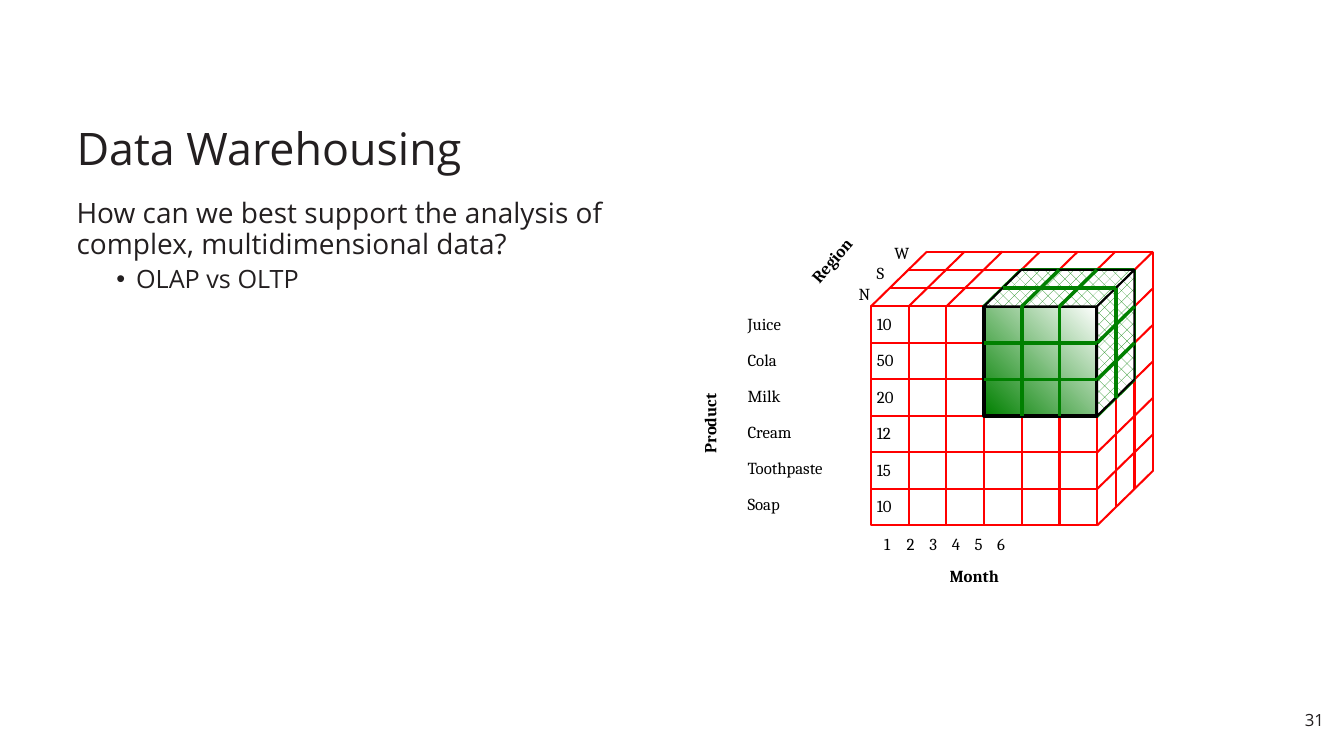
from lxml import etree
from pptx import Presentation
from pptx import util as u
from pptx.dml.color import RGBColor
from pptx.enum import dml, shapes, text
from pptx.oxml.ns import qn

COLOURS = {
    "ink": "231F20",
    "label": "000000",
    "grid": "FF0000",
    "slice": "008000",
    "edge": "000000",
    "paper": "FFFFFF",
}
THIN, THICK = 1.48, 2.48
COUNT, DEPTH = 6, 3
CUBE_LEFT, CUBE_TOP = 21.95, 7.72
CELL_WIDTH, CELL_HEIGHT = 0.95, 0.92
DEPTH_X, DEPTH_Y = 0.47, 0.46
SLICE_START, SLICE_ROWS, SLICE_DEPTH = 3, 3, 2
MONTH_STEP = 0.57

PRODUCTS = ["Juice", "Cola", "Milk", "Cream", "Toothpaste", "Soap"]
SALES = ["10", "50", "20", "12", "15", "10"]
REGIONS = ["N", "S", "W"]


def colour(name):
    return RGBColor.from_string(COLOURS[name])


def project(column, row, depth):
    return (
        u.Cm(CUBE_LEFT + column * CELL_WIDTH + depth * DEPTH_X),
        u.Cm(CUBE_TOP + row * CELL_HEIGHT - depth * DEPTH_Y),
    )


def write_text(paragraph, content, size=12, font="Cambria", color="label",
               bold=False, align=text.PP_ALIGN.LEFT, spacing=None, before=0):
    paragraph.alignment = align
    paragraph.space_before = u.Pt(before)
    if spacing:
        paragraph.line_spacing = spacing
    run = paragraph.add_run()
    run.text = content
    run.font.size = u.Pt(size)
    run.font.name = font
    run.font.bold = bold
    run.font.color.rgb = colour(color)


def place(shape, left, top, width, height):
    shape.left, shape.top = u.Cm(left), u.Cm(top)
    shape.width, shape.height = u.Cm(width), u.Cm(height)


def set_frame(frame, anchor, side=0.0, edge=0.0):
    frame.word_wrap = True
    frame.auto_size = text.MSO_AUTO_SIZE.NONE
    frame.vertical_anchor = anchor
    frame.margin_left = frame.margin_right = u.Cm(side)
    frame.margin_top = frame.margin_bottom = u.Cm(edge)


def set_bullet(paragraph, margin=0.0, indent=0.0, character=None):
    properties = paragraph._p.get_or_add_pPr()
    properties.set("marL", str(u.Cm(margin)))
    properties.set("indent", str(u.Cm(indent)))
    if character:
        etree.SubElement(properties, qn("a:buFont"), typeface="Arial")
        etree.SubElement(properties, qn("a:buChar"), char=character)
    else:
        etree.SubElement(properties, qn("a:buNone"))


def add_label(slide, content, left, top, width=2.5, height=0.6, rotation=0,
              **text_format):
    box = slide.shapes.add_textbox(0, 0, 0, 0)
    place(box, left, top, width, height)
    box.rotation = rotation
    set_frame(box.text_frame, text.MSO_ANCHOR.TOP)
    paragraph = box.text_frame.paragraphs[0]
    write_text(paragraph, content, **text_format)
    return paragraph


def add_line(slide, start, end, color="grid", width=THIN):
    line = slide.shapes.add_connector(
        shapes.MSO_CONNECTOR.STRAIGHT, *project(*start), *project(*end))
    line.line.color.rgb = colour(color)
    line.line.width = u.Pt(width)
    etree.SubElement(line._element.spPr, qn("a:effectLst"))


def add_front(slide, start, end, color, width):
    left, top = project(*start)
    right, bottom = project(*end)
    front = slide.shapes.add_shape(
        shapes.MSO_SHAPE.RECTANGLE, left, top, right - left, bottom - top)
    front.shadow.inherit = False
    front.fill.background()
    front.line.color.rgb = colour(color)
    front.line.width = u.Pt(width)
    return front


def add_face(slide, corners):
    points = [project(*corner) for corner in corners]
    builder = slide.shapes.build_freeform(*points[0])
    builder.add_line_segments(points[1:], close=True)
    face = builder.convert_to_shape()
    face.shadow.inherit = False
    face.fill.patterned()
    face.fill.pattern = dml.MSO_PATTERN_TYPE.PERCENT_25
    face.fill.fore_color.rgb = colour("slice")
    face.fill.back_color.rgb = colour("paper")
    face.line.color.rgb = colour("edge")
    face.line.width = u.Pt(THIN)


def add_cube(slide):
    add_front(slide, (0, 0, 0), (COUNT, COUNT, 0), "grid", THIN)
    for step in range(1, COUNT):
        add_line(slide, (0, step, 0), (COUNT, step, 0))
        add_line(slide, (step, 0, 0), (step, COUNT, 0))
    for depth in range(1, DEPTH + 1):
        add_line(slide, (0, 0, depth), (COUNT, 0, depth))
        add_line(slide, (COUNT, 0, depth), (COUNT, COUNT, depth))
    for step in range(COUNT + 1):
        add_line(slide, (step, 0, 0), (step, 0, DEPTH))
    for step in range(1, COUNT + 1):
        add_line(slide, (COUNT, step, 0), (COUNT, step, DEPTH))


def add_slice(slide):
    first, last, rows, back = SLICE_START, COUNT, SLICE_ROWS, SLICE_DEPTH
    front = add_front(slide, (first, 0, 0), (last, rows, 0), "edge", THICK)
    front.fill.gradient()
    front.fill.gradient_angle = 45
    for stop, name in zip(front.fill.gradient_stops, ("slice", "paper")):
        stop.color.rgb = colour(name)

    top = [(first, 0, 0), (first, 0, back), (last, 0, back), (last, 0, 0)]
    side = [(last, 0, 0), (last, 0, back), (last, rows, back), (last, rows, 0)]
    outline = top[:3] + side[2:]
    for start, end in zip(outline, outline[1:]):
        add_line(slide, start, end, "slice", THICK)
    add_face(slide, top)
    add_face(slide, side)

    for row in range(1, rows):
        add_line(slide, (first, row, 0), (last, row, 0), "slice", THICK)
        add_line(slide, (last, row, 0), (last, row, back), "slice", THICK)
    for column in range(first + 1, last):
        add_line(slide, (column, 0, 0), (column, rows, 0), "slice", THICK)
        add_line(slide, (column, 0, 0), (column, 0, back), "slice", THICK)
    for depth in range(1, back):
        add_line(slide, (first, 0, depth), (last, 0, depth), "slice", THICK)
        add_line(slide, (last, 0, depth), (last, rows, depth), "slice", THICK)


def add_cube_labels(slide):
    for row, (product, sale) in enumerate(zip(PRODUCTS, SALES)):
        add_label(slide, product, 18.84, 7.9 + row * 0.91)
        add_label(slide, sale, 22.1, 7.9 + row * CELL_HEIGHT, width=0.65)
    for depth, region in enumerate(REGIONS):
        add_label(slide, region, 21.64 + depth * 0.45, 7.14 - depth * 0.51,
                  width=0.6)
    months = add_label(slide, "\t".join(str(n + 1) for n in range(COUNT)),
                       22.28, 13.44, width=5.23)
    tabs = etree.SubElement(months._p.get_or_add_pPr(), qn("a:tabLst"))
    for step in range(1, COUNT):
        etree.SubElement(tabs, qn("a:tab"), pos=str(u.Cm(step * MONTH_STEP)),
                         algn="l")
    add_label(slide, "Month", 23.93, 14.25, bold=True)
    add_label(slide, "Region", 20.17, 5.82, height=0.7, rotation=311, bold=True)
    add_label(slide, "Product", 16.33, 9.22, width=3.5, height=0.9,
              rotation=270, bold=True)


def add_main_text(slide):
    heading = {"font": "Open Sans", "color": "ink", "spacing": 0.9}
    title, body = slide.placeholders
    place(title, 1.73, 1.93, 30.4, 2.59)
    set_frame(title.text_frame, text.MSO_ANCHOR.BOTTOM, 0.2, 0.1)
    write_text(title.text_frame.paragraphs[0], "Data Warehousing", size=32,
               **heading)

    place(body, 1.73, 4.93, 15.01, 12.4)
    set_frame(body.text_frame, text.MSO_ANCHOR.TOP, 0.2, 0.1)
    question = body.text_frame.paragraphs[0]
    set_bullet(question)
    write_text(question, "How can we best support the analysis of complex, "
               "multidimensional data?", size=20, **heading)
    topic = body.text_frame.add_paragraph()
    topic.level = 1
    set_bullet(topic, 1.5, -0.5, "•")
    write_text(topic, "OLAP vs OLTP", size=18, before=5, **heading)


def main():
    presentation = Presentation()
    presentation.slide_width = u.Cm(33.87)
    presentation.slide_height = u.Cm(19.05)
    slide = presentation.slides.add_slide(presentation.slide_layouts[1])
    add_main_text(slide)
    add_cube(slide)
    add_slice(slide)
    add_cube_labels(slide)
    add_label(slide, "31", 32.13, 17.88, width=1.24, font="Open Sans",
              color="ink", align=text.PP_ALIGN.RIGHT)
    presentation.save("out.pptx")


if __name__ == "__main__":
    main()
